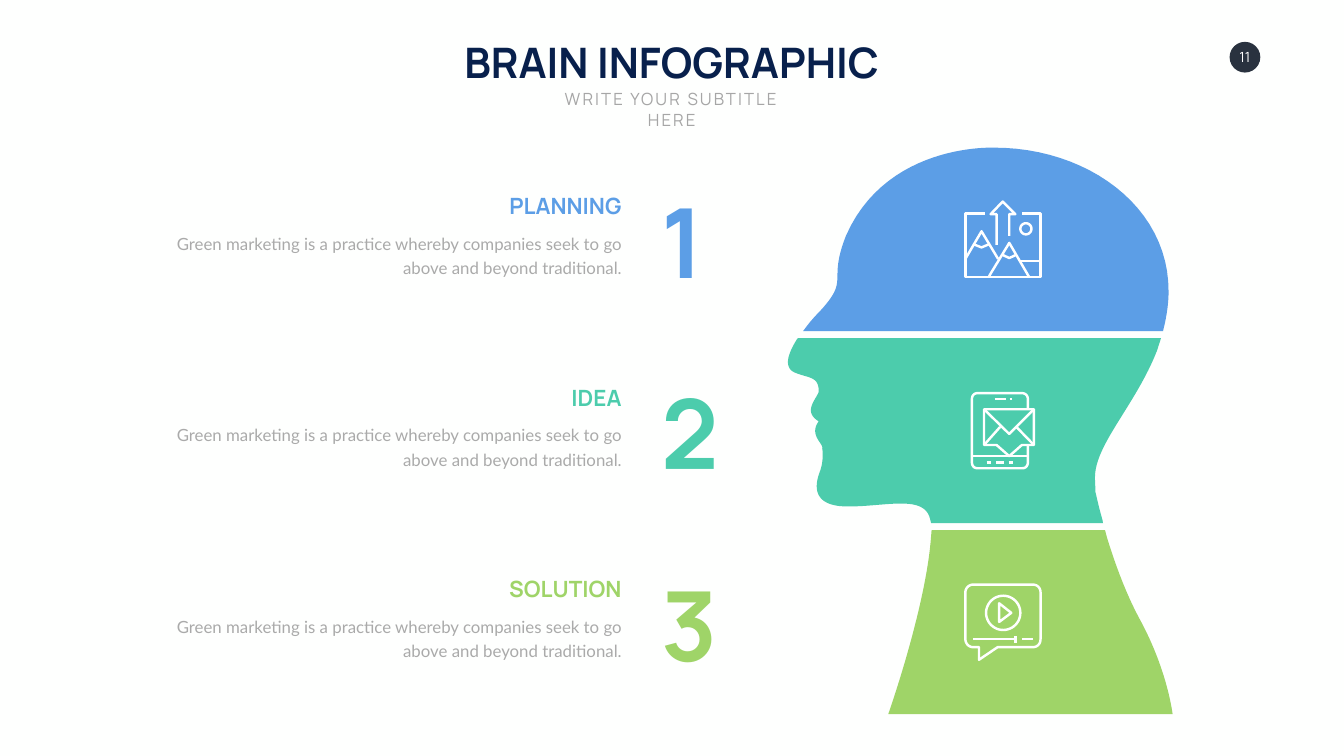
from math import cos, pi, sin

from pptx import Presentation
from pptx.dml.color import RGBColor
from pptx.enum.shapes import MSO_SHAPE
from pptx.enum.text import MSO_ANCHOR as ANCHOR, MSO_AUTO_SIZE as AUTO, PP_ALIGN as ALIGN
from pptx.util import Inches, Pt

COLORS = {
    "back": "FEFFFE", "white": "FFFFFF", "badge": "29323F", "title": "08204C",
    "subtitle": "A6A6A6", "body": "AAAAAA",
    "planning": "5C9EE6", "idea": "4CCCAC", "solution": "9FD468",
}
BODY = "Green marketing is a practice whereby companies seek to go above and beyond traditional."
# heading, colour, heading width, number width
ROWS = [
    ("PLANNING", "planning", 2.52, 0.93),
    ("IDEA", "idea", 1.23, 1.31),
    ("SOLUTION", "solution", 2.45, 1.37),
]
ROW_PITCH = 3.8

# Outlines in inches: M move, L line, C cubic curve, O circle (centre, radius), Z close
HEAD_PARTS = [
    ("planning",
     "M 4.07 0 C 5.92 -.01 7.56 1.16 7.55 2.86 C 7.55 3.07 7.52 3.27 7.48 3.47 L 7.44 3.64 "
     "L .3 3.64 L .33 3.6 C .41 3.49 .51 3.37 .63 3.25 C 1.24 2.59 .78 2.69 1.15 1.75 "
     "C 1.88 .08 3.69 0 4.02 0 Z"),
    ("idea",
     "M .2 3.78 L 7.4 3.78 L 7.32 4.03 C 6.9 5.1 6.09 5.89 6.09 6.54 "
     "C 6.09 6.64 6.1 6.74 6.1 6.84 C 6.11 6.86 6.15 7.08 6.24 7.39 L 6.25 7.45 L 2.84 7.45 "
     "L 2.82 7.37 C 2.71 6.88 1.95 7.12 1.19 7.12 C .42 7.12 .55 6.64 .64 6.41 "
     "C .72 6.18 .68 5.96 .68 5.96 C .71 5.88 .41 5.7 .61 5.43 C .3 5.24 .54 5.02 .61 4.85 "
     "C .62 4.53 .41 4.58 .13 4.46 C -.06 4.37 -.04 4.15 .18 3.8 Z"),
    ("solution",
     "M 2.85 7.59 L 6.29 7.59 L 6.33 7.74 C 6.48 8.23 6.7 8.84 6.97 9.34 "
     "C 7.53 10.36 7.63 11.24 7.63 11.24 L 1.99 11.24 C 1.99 11.24 2.7 9.23 2.83 7.83 Z"),
]
PICTURE_ICON = (
    "M .41 .26 L .02 .26 L .02 1.52 L 1.51 1.52 L 1.51 .26 L 1.14 .26 "
    "M .03 1.14 L .34 .61 L .67 1.16 M .49 1.5 L .89 .84 L 1.28 1.51 "
    "M .19 .87 L .34 .93 L .48 .87 M .76 1.08 L .89 1.14 L 1.02 1.08 "
    "M 1.12 1.2 L 1.5 1.2 O 1.22 .56 .11 "
    "M .64 .88 L .64 .27 L .52 .27 L .76 .02 L 1.01 .27 L .89 .27 L .89 .7")
PHONE_ICON = (
    "M 1.14 .33 L 1.14 .15 C 1.14 .08 1.09 .03 1.02 .03 L .15 .03 C .07 .03 .03 .08 .03 .15 "
    "L .03 1.4 C .03 1.47 .07 1.52 .14 1.52 L 1.03 1.52 C 1.1 1.52 1.14 1.47 1.14 1.4 "
    "L 1.14 1.08 M .03 1.28 L 1.14 1.28 M .48 .15 L .7 .15 M .78 .15 L .82 .15 "
    "M .32 1.41 L .4 1.41 M .51 1.41 L .66 1.41 M .76 1.41 L .84 1.41 "
    "M .27 .35 L 1.26 .35 L 1.26 1.06 L 1.02 1.06 L .77 1.28 L .52 1.06 L .27 1.06 Z "
    "M .27 .35 L .77 .84 L 1.26 .35 M .27 1.06 L .59 .7 M 1.26 1.06 L .91 .7")
VIDEO_ICON = (
    "M .18 .03 L 1.37 .03 C 1.46 .03 1.52 .1 1.52 .18 L 1.52 1.11 "
    "C 1.52 1.2 1.46 1.27 1.37 1.27 L .67 1.27 L .3 1.52 L .3 1.27 L .18 1.27 "
    "C .1 1.27 .03 1.2 .03 1.11 L .03 .18 C .03 .1 .1 .03 .18 .03 Z "
    "O .78 .59 .34 M .7 .4 L .94 .59 L .7 .77 Z "
    "M .18 1.11 L 1.02 1.11 M 1.02 1.05 L 1.02 1.18 M 1.15 1.11 L 1.37 1.11")
ICONS = [(3.5, 1.05, PICTURE_ICON), (3.62, 4.84, PHONE_ICON), (3.49, 8.64, VIDEO_ICON)]


def rgb(name):
    return RGBColor.from_string(COLORS[name])


def set_text(sp, text, size, color, font="Manrope", bold=False, align=ALIGN.LEFT,
             anchor=ANCHOR.TOP, wrap=False, grow=True, inset=None, tracking=None,
             line=None, before=None):
    tf = sp.text_frame
    tf.word_wrap, tf.vertical_anchor = wrap, anchor
    tf.auto_size = AUTO.SHAPE_TO_FIT_TEXT if grow else AUTO.NONE
    if inset is not None:
        tf.margin_left = tf.margin_right = tf.margin_top = tf.margin_bottom = Inches(inset)
    p = tf.paragraphs[0]
    p.alignment = align
    if line:
        p.line_spacing, p.space_before = Pt(line), Pt(before)
    r = p.add_run()
    r.text = text
    r.font.name, r.font.size, r.font.bold = font, Pt(size), bold
    r.font.color.rgb = rgb(color)
    if tracking:
        r.font._element.set("spc", str(tracking * 100))


def add_text(s, x, y, w, h, text, **fmt):
    sp = s.shapes.add_textbox(Inches(x), Inches(y), Inches(w), Inches(h))
    set_text(sp, text, **fmt)


def cubic(a, b, c, d, steps=24):
    """Points along a cubic curve, without its start."""
    for i in range(1, steps + 1):
        t = i / steps
        u = 1 - t
        yield tuple(u**3 * p + 3 * u * u * t * q + 3 * u * t * t * m + t**3 * n
                    for p, q, m, n in zip(a, b, c, d))


def contours(outline):
    """Turn an outline string into a list of [points, closed]."""
    found, tokens = [], iter(outline.split())

    def point():
        return float(next(tokens)), float(next(tokens))

    for cmd in tokens:
        if cmd == "M":
            found.append([[point()], False])
        elif cmd == "L":
            found[-1][0].append(point())
        elif cmd == "C":
            pts = found[-1][0]
            pts.extend(list(cubic(pts[-1], point(), point(), point())))
        elif cmd == "O":
            (cx, cy), radius = point(), float(next(tokens))
            angles = [2 * pi * i / 48 for i in range(48)]
            found.append([[(cx + radius * cos(a), cy + radius * sin(a)) for a in angles], True])
        else:
            found[-1][1] = True
    return found


def add_outline(s, x, y, outline, fill=None, stroke=None):
    builder = None
    for pts, closed in contours(outline):
        first, *rest = [(Inches(x + px), Inches(y + py)) for px, py in pts]
        if builder is None:
            builder = s.shapes.build_freeform(*first)
        else:
            builder.move_to(*first)
        builder.add_line_segments(rest, close=closed)
    sp = builder.convert_to_shape()
    sp.shadow.inherit = False
    if fill:
        sp.fill.solid()
        sp.fill.fore_color.rgb = rgb(fill)
    else:
        sp.fill.background()
    if stroke:
        sp.line.color.rgb, sp.line.width = rgb(stroke), Pt(3.5)
    else:
        sp.line.fill.background()


def add_badge(s, x, y, size, number):
    sp = s.shapes.add_shape(MSO_SHAPE.OVAL, Inches(x), Inches(y), Inches(size), Inches(size))
    sp.shadow.inherit = False
    sp.fill.solid()
    sp.fill.fore_color.rgb = rgb("badge")
    sp.line.fill.background()
    set_text(sp, number, size=20, color="white", align=ALIGN.CENTER, anchor=ANCHOR.MIDDLE,
             grow=False, inset=0)


def add_header(s, x, y, w):
    add_text(s, x, y, w, 1.11, "BRAIN INFOGRAPHIC", size=60, color="title", bold=True,
             align=ALIGN.CENTER)
    sub_w = 5.43
    add_text(s, x + (w - sub_w) / 2, y + 1.05, sub_w, 0.5, "WRITE YOUR SUBTITLE HERE", size=24,
             color="subtitle", align=ALIGN.CENTER, tracking=3, wrap=True)


def add_row(s, x, y, w, number, heading, color, heading_w, number_w):
    """Heading and body flush right in the box, with the number to its right."""
    add_text(s, x + w + 0.6, y, number_w, 2.42, number, size=138, color=color, bold=True,
             anchor=ANCHOR.MIDDLE)
    add_text(s, x + w - heading_w, y + 0.22, heading_w, 0.64, heading, size=32, color=color,
             bold=True, align=ALIGN.RIGHT, anchor=ANCHOR.BOTTOM)
    add_text(s, x, y + 0.96, w, 1.03, BODY, size=24, color="body", font="Lato",
             align=ALIGN.RIGHT, wrap=True, line=35, before=4.8)


def add_head(s, x, y):
    for color, outline in HEAD_PARTS:
        add_outline(s, x, y, outline, fill=color)
    for dx, dy, outline in ICONS:
        add_outline(s, x + dx, y + dy, outline, stroke="white")


def main():
    prs = Presentation()
    prs.slide_width, prs.slide_height = Inches(26.66), Inches(15)
    s = prs.slides.add_slide(prs.slide_layouts[6])
    s.background.fill.solid()
    s.background.fill.fore_color.rgb = rgb("back")
    add_badge(s, 24.39, 0.83, 0.61, "11")
    add_header(s, 8.91, 0.67, 8.83)
    add_head(s, 15.63, 2.93)
    for i, row in enumerate(ROWS):
        add_row(s, 3.4, 3.54 + i * ROW_PITCH, 9.03, str(i + 1), *row)
    prs.save("out.pptx")


if __name__ == "__main__":
    main()
